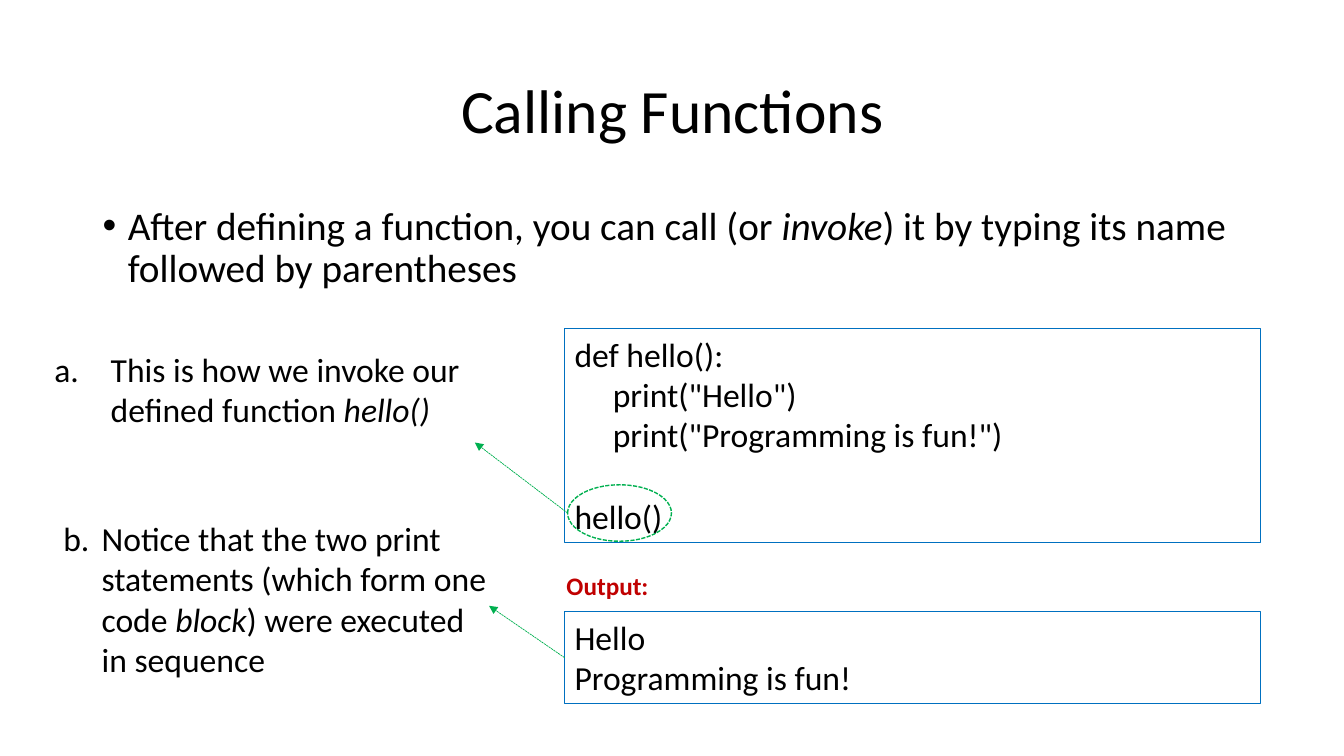
"""Build the "Calling Functions" slide."""
from pptx import Presentation
from pptx.dml.color import RGBColor
from pptx.enum.dml import MSO_LINE
from pptx.enum.shapes import MSO_CONNECTOR as LINK, MSO_SHAPE as SHAPE
from pptx.enum.text import MSO_ANCHOR as ANCHOR, PP_ALIGN as ALIGN
from pptx.oxml.ns import qn
from pptx.util import Inches, Pt
from lxml.etree import SubElement

THEME = {
    "font": "Calibri", "title": 44, "body": 28, "code": 24, "label": 18,
    "ink": "000000", "frame": "0070C0", "mark": "00B050", "alert": "C00000",
}

TITLE = [[("Calling Functions", False)]]
INTRO = [[
    ("After defining a function, you can call (or ", False), ("invoke", True),
    (") it by typing its name followed by parentheses", False),
]]
INVOKE_NOTE = [[
    ("This is how we invoke our \ndefined function ", False), ("hello()", True),
]]
SEQUENCE_NOTE = [[
    ("Notice that the two print \nstatements (which form one \ncode ", False),
    ("block", True), (") were executed \nin sequence", False),
]]
CODE = [
    [("def hello():", False)],
    [('print("Hello")', False)],
    [('print("Programming is fun!")', False)],
    [("hello()", False)],
]
OUTPUT_LABEL = [[("Output:", False)]]
OUTPUT = [[("Hello", False)], [("Programming is fun!", False)]]

TITLE_AT = (0.92, 0.4, 11.5, 1.45)
INTRO_AT = (0.92, 2, 11.5, 1)
INVOKE_AT = (0.44, 3.41, 4.34, 0.91)
SEQUENCE_AT = (0.53, 5.09, 4.5, 1.72)
CODE_AT = (5.6, 3.26, 6.9, 2.12)
LABEL_AT = (5.52, 5.61, 1.02, 0.4)
OUTPUT_AT = (5.6, 6.07, 6.9, 0.91)
CALL_AT = (5.63, 4.81, 1.03, 0.56)
CODE_INDENT = 0.38
CODE_GAP = 29.3


def color(name):
    return RGBColor.from_string(THEME[name])


def outline(line, name, width, dashed=False):
    line.color.rgb = color(name)
    line.width = Pt(width)
    if dashed:
        line.dash_style = MSO_LINE.SQUARE_DOT


def add_outline(page, kind, at, name, width, dashed=False):
    shape = page.shapes.add_shape(kind, *map(Inches, at))
    shape.shadow.inherit = False
    shape.fill.background()
    outline(shape.line, name, width, dashed)
    return shape


def write(box, paragraphs, size, ink="ink", bold=False, wrap=True):
    frame = box.text_frame
    frame.word_wrap = wrap
    frame.vertical_anchor = ANCHOR.TOP
    for index, spans in enumerate(paragraphs):
        para = frame.add_paragraph() if index else frame.paragraphs[0]
        para.alignment = ALIGN.LEFT
        para.font.name = THEME["font"]
        para.font.size = Pt(THEME[size])
        para.font.color.rgb = color(ink)
        para.font.bold = bold
        for text, italic in spans:
            for row, piece in enumerate(text.split("\n")):
                if row:
                    para.add_line_break()
                span = para.add_run()
                span.text = piece
                span.font.italic = italic
    return frame.paragraphs


def add_text(page, at, paragraphs, size, **options):
    box = page.shapes.add_textbox(*map(Inches, at))
    return box, write(box, paragraphs, size, **options)


def indent(para, left, first=0.0):
    properties = para._p.get_or_add_pPr()
    properties.set("marL", str(Inches(left)))
    properties.set("indent", str(Inches(first)))
    return properties


def number(para, hanging, start):
    properties = indent(para, hanging, -hanging)
    SubElement(properties, qn("a:buFont"), typeface="+mj-lt")
    SubElement(properties, qn("a:buAutoNum"), type="alphaLcPeriod", startAt=str(start))
    properties.append(properties.find(qn("a:defRPr")))


def bullet(para, hanging):
    properties = indent(para, hanging, -hanging)
    SubElement(properties, qn("a:buFont"), typeface="Arial")
    SubElement(properties, qn("a:buChar"), char="•")
    properties.append(properties.find(qn("a:defRPr")))


def add_arrow(page, start, end):
    arrow = page.shapes.add_connector(LINK.STRAIGHT, *map(Inches, start + end))
    outline(arrow.line, "mark", 0.5, True)
    SubElement(arrow.line._get_or_add_ln(), qn("a:tailEnd"), type="triangle")
    SubElement(arrow._element.spPr, qn("a:effectLst"))
    return arrow


def main():
    deck = Presentation()
    deck.slide_width, deck.slide_height = Inches(13.33), Inches(7.5)
    page = deck.slides.add_slide(deck.slide_layouts[6])

    intro = add_text(page, INTRO_AT, INTRO, "body")[1][0]
    intro.line_spacing = 0.9
    bullet(intro, 0.25)

    title_box, (title,) = add_text(page, TITLE_AT, TITLE, "title")
    title_box.text_frame.vertical_anchor = ANCHOR.MIDDLE
    title.alignment = ALIGN.CENTER
    title.line_spacing = 0.9

    code_box = add_outline(page, SHAPE.RECTANGLE, CODE_AT, "frame", 0.75)
    lines = write(code_box, CODE, "code")
    for line in lines[1:3]:
        indent(line, CODE_INDENT)
    lines[3].space_before = Pt(CODE_GAP)

    notes = [(INVOKE_AT, INVOKE_NOTE, 0.56), (SEQUENCE_AT, SEQUENCE_NOTE, 0.38)]
    for start, (at, note, hanging) in enumerate(notes, 1):
        number(add_text(page, at, note, "code")[1][0], hanging, start)

    add_outline(page, SHAPE.OVAL, CALL_AT, "mark", 1, True)
    output_box = add_outline(page, SHAPE.RECTANGLE, OUTPUT_AT, "frame", 0.75)
    write(output_box, OUTPUT, "code")
    add_text(page, LABEL_AT, OUTPUT_LABEL, "label", ink="alert", bold=True, wrap=False)

    add_arrow(page, (5.63, 5.09), (4.71, 4.39))
    add_arrow(page, (5.6, 6.52), (4.85, 6.01)).begin_connect(output_box, 1)
    deck.save("out.pptx")


if __name__ == "__main__":
    main()
